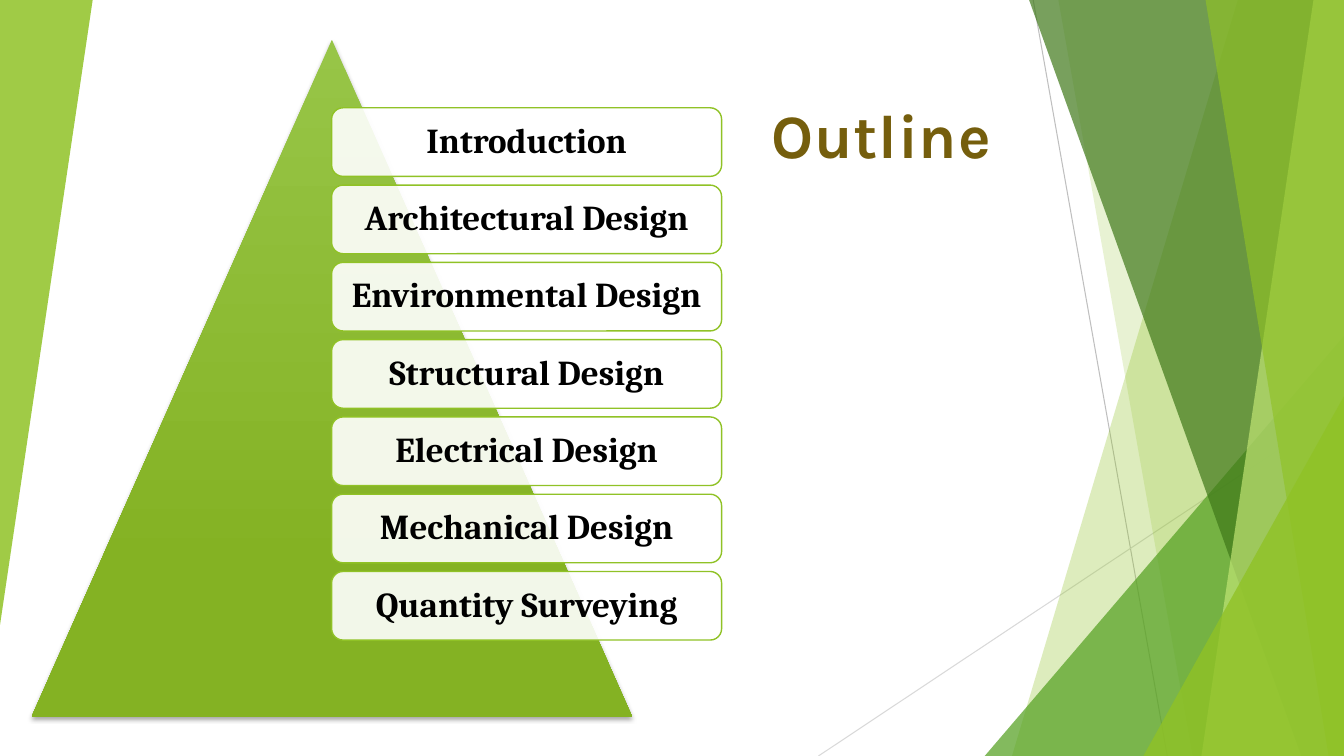
from dataclasses import dataclass

from lxml import etree
from pptx import Presentation
from pptx.dml.color import RGBColor
from pptx.enum.shapes import MSO_CONNECTOR, MSO_SHAPE
from pptx.enum.text import MSO_ANCHOR, PP_ALIGN
from pptx.oxml.ns import qn
from pptx.shapes.autoshape import Shape
from pptx.slide import Slide
from pptx.text.text import TextFrame
from pptx.util import Pt

STRAIGHT = MSO_CONNECTOR.STRAIGHT
TRIANGLE = MSO_SHAPE.ISOSCELES_TRIANGLE
ROUNDED = MSO_SHAPE.ROUNDED_RECTANGLE
CENTER = PP_ALIGN.CENTER
TOP, MIDDLE = MSO_ANCHOR.TOP, MSO_ANCHOR.MIDDLE

SLIDE_WIDTH, SLIDE_HEIGHT = 960, 540


@dataclass(frozen=True)
class Theme:
    lime: str = "90C226"
    green: str = "54A021"
    forest: str = "3F7819"
    pale_lime: str = "C0E474"
    pyramid_top: str = "97C547"
    pyramid_base: str = "84B223"
    white: str = "FFFFFF"
    black: str = "000000"
    title: str = "755E0D"
    title_outline: str = "0D0D0D"
    title_font: str = "Karla"
    topic_font: str = "Cambria"
    title_size: float = 44
    topic_size: float = 25


THEME = Theme()


@dataclass(frozen=True)
class Ray:
    start: tuple[float, float]
    end: tuple[float, float]
    color: str


@dataclass(frozen=True)
class Band:
    """Full-height band from a slanted left edge to the right slide edge."""
    top_x: float
    bottom_x: float
    color: str
    opacity: int


@dataclass(frozen=True)
class Corner:
    """Right triangle in the bottom right corner, or turned into the top left one."""
    width: float
    height: float
    color: str
    opacity: int
    turned: bool = False


RAYS = [
    Ray((738, 0), (833.8, 540), "BFBFBF"),
    Ray((960, 290.2), (584.6, 540), "D9D9D9"),
]
FACETS = [
    Band(884.2, 722.9, THEME.lime, 30),
    Band(756, 851.8, THEME.lime, 20),
    Corner(256.6, 300, THEME.green, 72),
    Band(735.1, 929.5, THEME.forest, 70),
    Band(938.2, 858.2, THEME.pale_lime, 70),
    Band(861.1, 949, THEME.lime, 65),
    Corner(143.3, 257, THEME.lime, 80),
    Corner(66.2, 446.4, THEME.lime, 85, turned=True),
]
TOPICS = [
    "Introduction",
    "Architectural Design",
    "Environmental Design",
    "Structural Design",
    "Electrical Design",
    "Mechanical Design",
    "Quantity Surveying",
]
TOPIC_LEFT, TOPIC_TOP, TOPIC_WIDTH, TOPIC_HEIGHT = 236.9, 77, 278.6, 49
TOPIC_PITCH = 55.2


def paint(shape: Shape, color: str, opacity: int) -> None:
    """Give a flat, borderless fill with the opacity in percent."""
    shape.shadow.inherit = False
    shape.line.fill.background()
    shape.fill.solid()
    shape.fill.fore_color.rgb = RGBColor.from_string(color)
    fill_color = shape._element.spPr.find(qn("a:solidFill"))[0]
    etree.SubElement(fill_color, qn("a:alpha"), val=str(opacity * 1000))


def write_text(frame: TextFrame, text: str, *, font: str, size: float, color: str,
               anchor: MSO_ANCHOR = MIDDLE, line_spacing: float = 1.0,
               tracking: float = 0, outline: str = "") -> None:
    frame.word_wrap = True
    frame.vertical_anchor = anchor
    paragraph = frame.paragraphs[0]
    paragraph.alignment = CENTER
    paragraph.line_spacing = line_spacing
    run = paragraph.add_run()
    run.text = text
    run.font.name = font
    run.font.size = Pt(size)
    run.font.bold = True
    run.font.color.rgb = RGBColor.from_string(color)
    properties = run._r.get_or_add_rPr()
    if tracking:
        properties.set("spc", str(round(tracking * 100)))
    if outline:
        line = etree.Element(qn("a:ln"), w=str(Pt(1.75)))
        line_fill = etree.SubElement(line, qn("a:solidFill"))
        etree.SubElement(line_fill, qn("a:srgbClr"), val=outline)
        properties.insert(0, line)


def draw_ray(slide: Slide, ray: Ray) -> None:
    points = [Pt(value) for value in (*ray.start, *ray.end)]
    connector = slide.shapes.add_connector(STRAIGHT, *points)
    connector.line.color.rgb = RGBColor.from_string(ray.color)
    connector.line.width = Pt(0.75)
    etree.SubElement(connector._element.spPr, qn("a:effectLst"))


def draw_facet(slide: Slide, facet: Band | Corner) -> None:
    if isinstance(facet, Band):
        builder = slide.shapes.build_freeform(Pt(facet.top_x), 0)
        builder.add_line_segments([
            (Pt(SLIDE_WIDTH), 0),
            (Pt(SLIDE_WIDTH), Pt(SLIDE_HEIGHT)),
            (Pt(facet.bottom_x), Pt(SLIDE_HEIGHT)),
        ])
        shape = builder.convert_to_shape()
    else:
        left = 0 if facet.turned else SLIDE_WIDTH - facet.width
        top = 0 if facet.turned else SLIDE_HEIGHT - facet.height
        shape = slide.shapes.add_shape(
            TRIANGLE, Pt(left), Pt(top), Pt(facet.width), Pt(facet.height))
        shape.adjustments[0] = 1
        shape.rotation = 180 if facet.turned else 0
    paint(shape, facet.color, facet.opacity)


def draw_pyramid(slide: Slide) -> None:
    pyramid = slide.shapes.add_shape(TRIANGLE, Pt(22.6), Pt(28.4), Pt(429), Pt(483.6))
    pyramid.line.fill.background()
    pyramid.fill.gradient()
    pyramid.fill.gradient_angle = 270
    stops = ((0, THEME.pyramid_top), (0.78, THEME.pyramid_base))
    for stop, (position, color) in zip(pyramid.fill.gradient_stops, stops):
        stop.position = position
        stop.color.rgb = RGBColor.from_string(color)
    pyramid.shadow.inherit = False
    effects = pyramid._element.spPr.find(qn("a:effectLst"))
    shadow = etree.SubElement(effects, qn("a:outerShdw"), blurRad=str(Pt(3)),
                              dist=str(Pt(2)), dir="5400000", rotWithShape="0")
    shadow_color = etree.SubElement(shadow, qn("a:srgbClr"), val=THEME.black)
    etree.SubElement(shadow_color, qn("a:alpha"), val="35000")


def draw_topic(slide: Slide, row: int, topic: str) -> None:
    box = slide.shapes.add_shape(
        ROUNDED, Pt(TOPIC_LEFT), Pt(TOPIC_TOP + row * TOPIC_PITCH),
        Pt(TOPIC_WIDTH), Pt(TOPIC_HEIGHT))
    paint(box, THEME.white, 90)
    box.line.color.rgb = RGBColor.from_string(THEME.lime)
    box.line.width = Pt(1)
    write_text(box.text_frame, topic, font=THEME.topic_font, size=THEME.topic_size,
               color=THEME.black, line_spacing=0.9)


def place_title(slide: Slide) -> None:
    title = slide.shapes.title
    title.left, title.top, title.width, title.height = Pt(321.8), Pt(65.5), Pt(615.6), Pt(60.5)
    write_text(title.text_frame, "Outline", font=THEME.title_font, size=THEME.title_size,
               color=THEME.title, anchor=TOP, tracking=0.5, outline=THEME.title_outline)


def main() -> None:
    presentation = Presentation()
    presentation.slide_width = Pt(SLIDE_WIDTH)
    presentation.slide_height = Pt(SLIDE_HEIGHT)
    slide = presentation.slides.add_slide(presentation.slide_layouts.get_by_name("Title Only"))
    place_title(slide)
    for ray in RAYS:
        draw_ray(slide, ray)
    for facet in FACETS:
        draw_facet(slide, facet)
    draw_pyramid(slide)
    for row, topic in enumerate(TOPICS):
        draw_topic(slide, row, topic)
    presentation.save("out.pptx")


if __name__ == "__main__":
    main()
